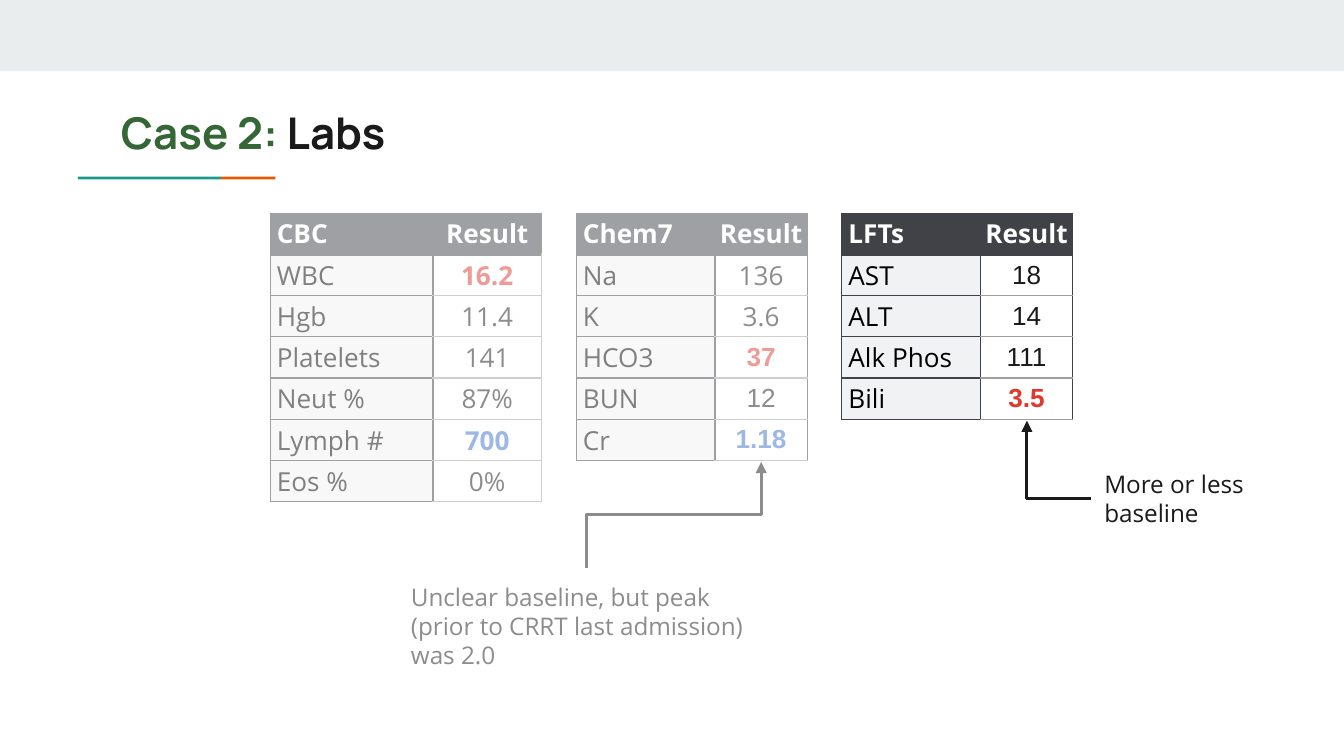
from dataclasses import dataclass
from typing import Any, NamedTuple

import pptx
import pptx.dml.color
import pptx.enum.shapes
import pptx.enum.text
import pptx.oxml
import pptx.oxml.ns
import pptx.util
from pptx.util import Pt


@dataclass(frozen=True)
class Theme:
    ink: str = "1A1A1A"
    label: str = "000000"
    white: str = "FFFFFF"
    banner: str = "E9EDEE"
    header: str = "404247"
    label_fill: str = "F1F2F3"
    grid: str = "9E9E9E"
    high: str = "DF382C"
    low: str = "3B71CA"
    case: str = "356635"
    teal: str = "1A9988"
    orange: str = "EB5600"
    title_font: str = "Manrope"
    body_font: str = "Open Sans"
    value_font: str = "Arial"
    title_size: float = 23.4
    table_size: float = 14
    note_size: float = 13


THEME = Theme()


class Box(NamedTuple):
    left: float
    top: float
    width: float
    height: float

    def lengths(self) -> list[int]:
        return [Pt(length) for length in self]


class Result(NamedTuple):
    test: str
    value: str
    font: str = THEME.body_font
    flag: str = ""


@dataclass(frozen=True)
class Panel:
    name: str
    left: float
    columns: tuple[float, float]
    right_border: str
    results: list[Result]


@dataclass(frozen=True)
class Arrow:
    box: Box
    rotation: int
    flipped: bool
    geometry: str


PANEL_TOP = 114.2
ROW_HEIGHT = 22.1
ARIAL = THEME.value_font

PANELS = [
    Panel("CBC", 144.7, (87.3, 58.1), THEME.grid, [
        Result("WBC", "16.2", flag=THEME.high), Result("Hgb", "11.4"),
        Result("Platelets", "141"), Result("Neut %", "87%"),
        Result("Lymph #", "700", flag=THEME.low), Result("Eos %", "0%")]),
    Panel("Chem7", 308.7, (74.4, 49.4), THEME.header, [
        Result("Na", "136"), Result("K", "3.6"),
        Result("HCO3", "37", ARIAL, THEME.high), Result("BUN", "12", ARIAL),
        Result("Cr", "1.18", ARIAL, THEME.low)]),
    Panel("LFTs", 450.9, (74.4, 49.4), THEME.header, [
        Result("AST", "18", ARIAL), Result("ALT", "14", ARIAL),
        Result("Alk Phos", "111", ARIAL), Result("Bili", "3.5", ARIAL, THEME.high)]),
]

CBC_VEIL = Box(130.3, 110.2, 166.3, 168.5)
CHEM_VEIL = Box(304.6, 110.2, 131.8, 200.9)
NOTE_VEIL = Box(213.1, 310.3, 198.7, 61.9)
CREATININE_ARROW = Arrow(Box(332.7, 229, 56.6, 93.6), 90, False, "bentConnector3")
BILI_ARROW = Arrow(Box(546.5, 229, 41.8, 34.6), 270, True, "bentConnector2")


def rgb(color: str) -> pptx.dml.color.RGBColor:
    return pptx.dml.color.RGBColor.from_string(color)


def set_format(target: Any, formats: dict[str, Any]) -> None:
    for attribute, value in formats.items():
        setattr(target, attribute, value)


def add_run(paragraph: Any, text: str, font: str, size: float, color: str,
            bold: bool = False) -> None:
    run = paragraph.add_run()
    run.text = text
    set_format(run.font, {"name": font, "size": Pt(size), "bold": bold})
    run.font.color.rgb = rgb(color)


def add_block(slide: Any, box: Box, color: str, opacity: int = 100) -> None:
    block = slide.shapes.add_shape(pptx.enum.shapes.MSO_SHAPE.RECTANGLE, *box.lengths())
    block.shadow.inherit = False
    block.fill.solid()
    block.fill.fore_color.rgb = rgb(color)
    block.line.fill.background()
    if opacity < 100:
        tint = block._element.spPr.find(".//" + pptx.oxml.ns.qn("a:srgbClr"))
        tint.append(pptx.oxml.parse_xml(
            f'<a:alpha {pptx.oxml.ns.nsdecls("a")} val="{opacity * 1000}"/>'))


def add_borders(cell: Any, borders: dict[str, tuple[str, float]]) -> None:
    for side, (color, width) in borders.items():
        cell._tc.get_or_add_tcPr().append(pptx.oxml.parse_xml(
            f'<a:ln{side} {pptx.oxml.ns.nsdecls("a")} w="{Pt(width)}">'
            f'<a:solidFill><a:srgbClr val="{color}"/></a:solidFill></a:ln{side}>'))


def fill_cell(cell: Any, text: str, font: str, color: str, bold: bool, fill: str,
              is_value: bool, borders: dict[str, tuple[str, float]]) -> None:
    set_format(cell, {"margin_left": Pt(0 if is_value else 3.6), "margin_right": 0,
                      "margin_top": 0, "margin_bottom": 0,
                      "vertical_anchor": pptx.enum.text.MSO_ANCHOR.MIDDLE})
    paragraph = cell.text_frame.paragraphs[0]
    align = pptx.enum.text.PP_ALIGN
    paragraph.alignment = align.CENTER if is_value else align.LEFT
    add_run(paragraph, text, font, THEME.table_size, color, bold)
    add_borders(cell, borders)
    if fill:
        cell.fill.solid()
        cell.fill.fore_color.rgb = rgb(fill)
    else:
        cell.fill.background()


def add_panel(slide: Any, panel: Panel) -> None:
    row_count = len(panel.results) + 1
    box = Box(panel.left, PANEL_TOP, sum(panel.columns), row_count * ROW_HEIGHT)
    table = slide.shapes.add_table(row_count, 2, *box.lengths()).table
    set_format(table, {"first_row": False, "horz_banding": False})
    for column, width in zip(table.columns, panel.columns):
        column.width = Pt(width)
    for row in table.rows:
        row.height = Pt(ROW_HEIGHT)

    dark, light, heavy = (THEME.header, 0.75), (THEME.grid, 0.75), (THEME.header, 1.5)
    for column, heading in enumerate((panel.name, "Result")):
        fill_cell(table.cell(0, column), heading, THEME.body_font, THEME.white, True,
                  THEME.header, column == 1, {"L": dark, "R": dark, "T": dark, "B": heavy})
    for row, result in enumerate(panel.results, 1):
        first = row == 1
        fill_cell(table.cell(row, 0), result.test, THEME.body_font, THEME.label, False,
                  THEME.label_fill, False,
                  {"L": dark, "R": dark, "T": heavy if first else dark, "B": dark})
        fill_cell(table.cell(row, 1), result.value, result.font, result.flag or THEME.ink,
                  bool(result.flag), "", True,
                  {"L": dark, "R": (panel.right_border, 0.75),
                   "T": heavy if first else light, "B": light})


def add_arrow(slide: Any, arrow: Arrow) -> None:
    left, top, width, height = arrow.box
    start, end = (left + width, left) if arrow.flipped else (left, left + width)
    connector = slide.shapes.add_connector(
        pptx.enum.shapes.MSO_CONNECTOR.ELBOW, Pt(start), Pt(top), Pt(end), Pt(top + height))
    connector.line.width = Pt(1.5)
    connector.line.color.rgb = rgb(THEME.ink)
    properties = connector._element.spPr
    properties.find(pptx.oxml.ns.qn("a:xfrm")).set("rot", str(arrow.rotation * 60000))
    properties.find(pptx.oxml.ns.qn("a:prstGeom")).set("prst", arrow.geometry)
    namespace = pptx.oxml.ns.nsdecls("a")
    connector.line._get_or_add_ln().append(
        pptx.oxml.parse_xml(f'<a:headEnd {namespace} type="triangle"/>'))
    properties.append(pptx.oxml.parse_xml(f"<a:effectLst {namespace}/>"))


def format_frame(frame: Any, anchor: Any) -> None:
    set_format(frame, {"word_wrap": True, "vertical_anchor": anchor,
                       "auto_size": pptx.enum.text.MSO_AUTO_SIZE.NONE})
    set_format(frame, {f"margin_{side}": Pt(7.2) for side in ("left", "top", "right", "bottom")})


def add_note(slide: Any, box: Box, text: str) -> None:
    frame = slide.shapes.add_textbox(*box.lengths()).text_frame
    format_frame(frame, pptx.enum.text.MSO_ANCHOR.TOP)
    add_run(frame.paragraphs[0], text, THEME.body_font, THEME.note_size, THEME.ink)


def add_title(slide: Any, box: Box) -> None:
    title = slide.shapes.title
    set_format(title, dict(zip(("left", "top", "width", "height"), box.lengths())))
    format_frame(title.text_frame, pptx.enum.text.MSO_ANCHOR.MIDDLE)
    heading = title.text_frame.paragraphs[0]
    heading.alignment = pptx.enum.text.PP_ALIGN.LEFT
    for text, color in (("Case 2:", THEME.case), (" Labs", THEME.ink)):
        add_run(heading, text, THEME.title_font, THEME.title_size, color, True)


def main() -> None:
    deck = pptx.Presentation()
    set_format(deck, {"slide_width": Pt(720), "slide_height": Pt(405)})
    slide = deck.slides.add_slide(deck.slide_layouts[5])
    add_block(slide, Box(0, 0, 720, 38.2), THEME.banner)
    add_block(slide, Box(41.8, 94.6, 76.6, 1.6), THEME.teal)
    add_block(slide, Box(118.4, 94.6, 29.2, 1.6), THEME.orange)
    add_title(slide, Box(57.6, 49.7, 605.5, 42.5))
    for panel in PANELS:
        add_panel(slide, panel)
    add_block(slide, CBC_VEIL, THEME.white, 50)
    add_arrow(slide, CREATININE_ARROW)
    add_note(slide, Box(213.1, 304.6, 201.6, 61.9),
             "Unclear baseline, but peak (prior to CRRT last admission) was 2.0")
    add_arrow(slide, BILI_ARROW)
    add_note(slide, Box(584.6, 244.1, 89.3, 46.1), "More or less baseline")
    for veil in (CHEM_VEIL, NOTE_VEIL):
        add_block(slide, veil, THEME.white, 50)
    deck.save("out.pptx")


if __name__ == "__main__":
    main()
